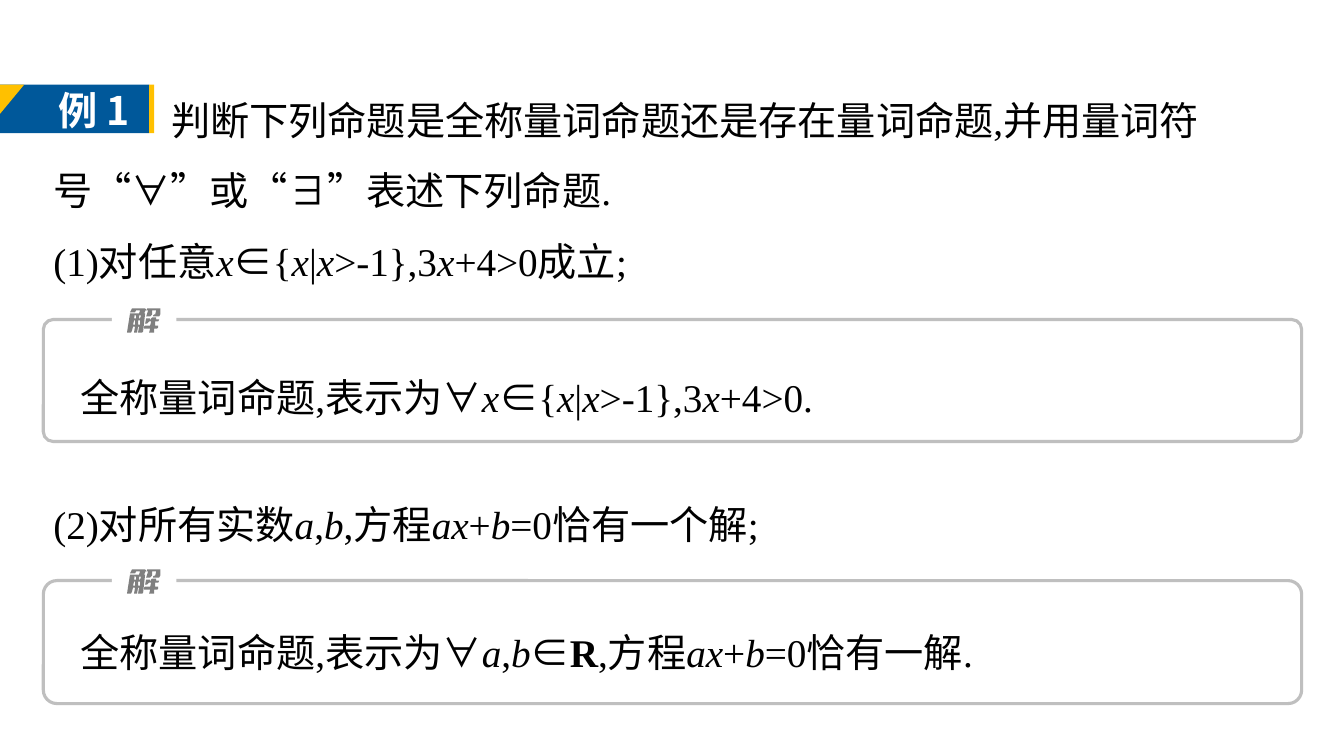
from itertools import groupby

from lxml import etree
from pptx import Presentation, util as u
from pptx.dml.color import RGBColor
from pptx.enum import shapes, text
from pptx.oxml.ns import qn

COLORS = {
    "text": "000000",
    "paper": "FFFFFF",
    "label": "00589A",
    "accent": "FFC000",
    "frame": "BFBFBF",
    "glyph": "808080",
}
LATIN = "Times New Roman"
CJK = "Noto Sans CJK SC"
ANSWER_GLYPH = [
    [(11, 12), (11, 16), (13, 16), (13, 12)],
    [(7, 12), (6, 16), (8, 16), (8, 12)],
    [(25, 9), (29, 9), (29, 11), (32, 11), (31, 13), (28, 13), (28, 17),
     (31, 17), (31, 19), (30, 20), (27, 20), (27, 24), (22, 24), (23, 20),
     (17, 20), (17, 18), (18, 17), (23, 17), (24, 13), (22, 13), (21, 14),
     (20, 15), (18, 15), (19, 10), (23, 10), (23, 11), (24, 11), (24, 10)],
    [(12, 7), (12, 10), (13, 10), (14, 7)],
    [(20, 0), (33, 0), (33, 6), (32, 8), (29, 8), (26, 8), (26, 7), (27, 6),
     (28, 6), (29, 2), (25, 2), (25, 6), (23, 8), (21, 8), (19, 8), (21, 2),
     (19, 2), (20, 1)],
    [(5, 0), (18, 0), (19, 1), (17, 5), (18, 5), (16, 23), (15, 24), (11, 24),
     (12, 18), (11, 18), (10, 24), (7, 24), (8, 18), (6, 18), (5, 22), (4, 24),
     (0, 24), (3, 5), (8, 5), (7, 10), (9, 10), (9, 7), (8, 7), (8, 5),
     (12, 5), (13, 2), (9, 2), (8, 4), (6, 4), (3, 4)],
]


def math_style(character):
    if character in "∈“”":
        return "symbol"
    if "a" <= character <= "z":
        return "variable"
    return "set" if character == "R" else "plain"


RUN_FORMATS = {
    "symbol": {"name": CJK},
    "variable": {"italic": True},
    "set": {"bold": True},
    "plain": {},
}


class ExampleSlide:
    def __init__(self, slide):
        self.slide = slide
        self.font = {"name": LATIN, "size": u.Pt(28), "bold": False, "italic": False}

    def color(self, name):
        return RGBColor.from_string(COLORS[name])

    def box(self, left, top, width, height):
        return [u.Inches(length) for length in (left, top, width, height)]

    def paint(self, shape, fill=None, line=None):
        shape.shadow.inherit = False
        if fill:
            shape.fill.solid()
            shape.fill.fore_color.rgb = self.color(fill)
        else:
            shape.fill.background()
        if line:
            shape.line.color.rgb = self.color(line)
            shape.line.width = u.Pt(2.25)
        else:
            shape.line.fill.background()

    def block(self, kind, *place, fill=None, line=None):
        shape = self.slide.shapes.add_shape(kind, *self.box(*place))
        self.paint(shape, fill, line)
        return shape

    def run(self, paragraph, words, color="text", **formats):
        run = paragraph.add_run()
        run.text = words
        for name, value in (self.font | formats).items():
            setattr(run.font, name, value)
        run.font.color.rgb = self.color(color)
        etree.SubElement(run.font._element, qn("a:ea"), typeface=CJK)

    def text_box(self, *place, wrap=True):
        frame = self.slide.shapes.add_textbox(*self.box(*place)).text_frame
        formats = {"word_wrap": wrap, "auto_size": text.MSO_AUTO_SIZE.NONE}
        for name, value in formats.items():
            setattr(frame, name, value)
        return frame

    def statements(self, lines, *place, indent=0):
        frame = self.text_box(*place)
        for index, line in enumerate(lines):
            paragraph = frame.add_paragraph() if index else frame.paragraphs[0]
            paragraph.line_spacing = 1.5
            if indent and index == 0:
                paragraph._p.get_or_add_pPr().set("indent", str(u.Inches(indent)))
            for style, characters in groupby(line, math_style):
                self.run(paragraph, "".join(characters), **RUN_FORMATS[style])

    def example_label(self):
        kinds = shapes.MSO_SHAPE
        self.block(kinds.RECTANGLE, 0, 0.84, 1.48, 0.48, fill="label")
        corner = self.block(kinds.RIGHT_TRIANGLE, 0, 0.84, 0.24, 0.29, fill="accent")
        corner._element.spPr.xfrm.set("flipV", "1")
        paragraph = self.text_box(0.48, 0.81, 1, 0.57, wrap=False).paragraphs[0]
        self.run(paragraph, "例 ", "paper", bold=True)
        self.run(paragraph, "1", "paper", bold=True, name=CJK)
        self.block(kinds.RECTANGLE, 1.48, 0.84, 0.05, 0.48, fill="accent")

    def glyph(self, left, top):
        builder = self.slide.shapes.build_freeform(
            *ANSWER_GLYPH[0][0], scale=u.Inches(0.01))
        for contour in ANSWER_GLYPH:
            builder.move_to(*contour[0])
            builder.add_line_segments(contour[1:], close=True)
        self.paint(builder.convert_to_shape(u.Inches(left), u.Inches(top)), "glyph")

    def answer(self, line, top, height, corner, text_top):
        kinds = shapes.MSO_SHAPE
        frame = self.block(kinds.ROUNDED_RECTANGLE, 0.43, top, 12.48, height, line="frame")
        frame.adjustments[0] = corner
        self.block(kinds.RECTANGLE, 1.11, top - 0.12, 0.64, 0.24, fill="paper")
        self.glyph(1.26, top - 0.11)
        self.statements([line], 0.7, text_top, 11.93, 0.73)


def main():
    presentation = Presentation()
    presentation.slide_width = u.Inches(13.33)
    presentation.slide_height = u.Inches(7.5)
    page = ExampleSlide(presentation.slides.add_slide(presentation.slide_layouts[6]))
    page.statements(
        ["判断下列命题是全称量词命题还是存在量词命题,并用量词符号“∀”或“∃”表述下列命题.",
         "(1)对任意x∈{x|x>-1},3x+4>0成立;"],
        0.43, 0.67, 12.48, 2.22, indent=1.17)
    page.example_label()
    page.answer("全称量词命题,表示为∀x∈{x|x>-1},3x+4>0.", 3.17, 1.21, 0.08, 3.42)
    page.statements(["(2)对所有实数a,b,方程ax+b=0恰有一个解;"], 0.43, 4.68, 12.48, 0.73)
    page.answer("全称量词命题,表示为∀a,b∈R,方程ax+b=0恰有一解.", 5.76, 1.22, 0.11, 5.95)
    presentation.save("out.pptx")


if __name__ == "__main__":
    main()
